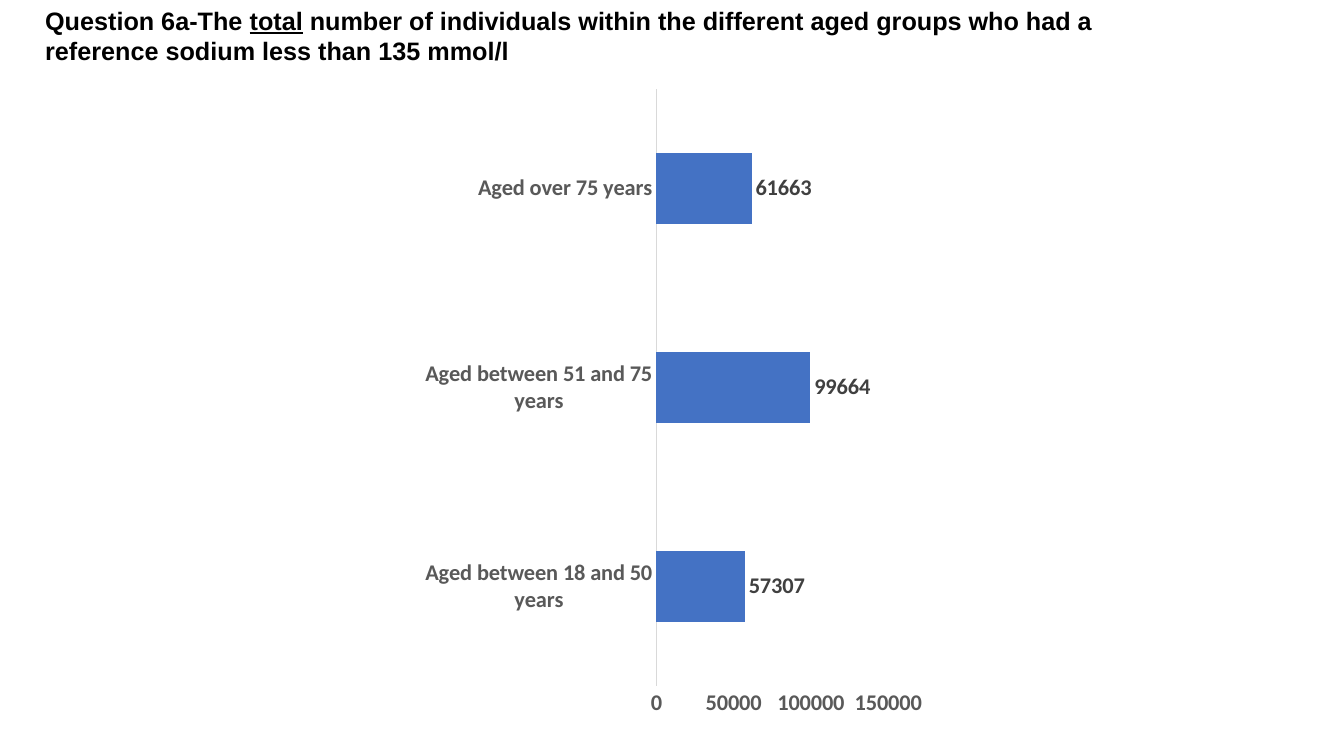
from lxml import etree
from pptx import Presentation
from pptx.chart.data import CategoryChartData
from pptx.dml.color import RGBColor
from pptx.enum.chart import XL_CHART_TYPE as ChartType
from pptx.enum.chart import XL_LABEL_POSITION as LabelPosition
from pptx.enum.chart import XL_TICK_MARK as TickMark
from pptx.enum.text import MSO_AUTO_SIZE as AutoSize
from pptx.oxml.ns import qn
from pptx.util import Inches, Pt

BLACK = RGBColor(0x00, 0x00, 0x00)
BAR_BLUE = RGBColor(0x44, 0x72, 0xC4)
AXIS_TEXT = RGBColor(0x59, 0x59, 0x59)
LABEL_TEXT = RGBColor(0x40, 0x40, 0x40)
AXIS_LINE = RGBColor(0xD9, 0xD9, 0xD9)

TITLE_LINES = [
    [("Question 6a-The ", False), ("total", True),
     (" number of individuals within the different aged groups who had a", False)],
    [("reference sodium less than 135 mmol/l", False)],
]
AGE_GROUPS = {
    "Aged between 18 and 50 years": 57307,
    "Aged between 51 and 75 years": 99664,
    "Aged over 75 years": 61663,
}
PLOT_LAYOUT = {
    "layoutTarget": "inner", "xMode": "edge", "yMode": "edge",
    "x": 0.46, "y": 0, "w": 0.46, "h": 0.93,
}


def set_values(target, values):
    for name, value in values.items():
        setattr(target, name, value)


def set_font(font, color, **values):
    set_values(font, values)
    font.color.rgb = color


def add_title(slide):
    shape = slide.shapes.add_textbox(Inches(0.35), Inches(0), Inches(10.73), Inches(0.71))
    frame = shape.text_frame
    set_values(frame, {"word_wrap": True, "auto_size": AutoSize.SHAPE_TO_FIT_TEXT})
    for index, line in enumerate(TITLE_LINES):
        paragraph = frame.add_paragraph() if index else frame.paragraphs[0]
        for text, underline in line:
            run = paragraph.add_run()
            run.text = text
            set_font(run.font, BLACK, name="Arial", size=Pt(18), bold=True, underline=underline)


def place_plot(chart):
    plot_area = chart.element.find(".//" + qn("c:plotArea"))
    for layout in plot_area.findall(qn("c:layout")):
        plot_area.remove(layout)
    layout = etree.Element(qn("c:layout"))
    manual = etree.SubElement(layout, qn("c:manualLayout"))
    for name, value in PLOT_LAYOUT.items():
        etree.SubElement(manual, qn(f"c:{name}")).set("val", str(value))
    plot_area.insert(0, layout)


def format_axis(axis):
    set_values(axis, {
        "has_major_gridlines": False,
        "major_tick_mark": TickMark.NONE,
        "minor_tick_mark": TickMark.NONE,
    })
    set_font(axis.tick_labels.font, AXIS_TEXT, name="Calibri", size=Pt(16), bold=True)


def add_age_chart(slide):
    data = CategoryChartData()
    data.categories = list(AGE_GROUPS)
    data.add_series("Series 1", list(AGE_GROUPS.values()))
    frame = slide.shapes.add_chart(ChartType.BAR_CLUSTERED, Inches(4.21), Inches(0.88),
                                   Inches(5), Inches(6.37), data)
    chart = frame.chart
    set_values(chart, {"has_legend": False, "has_title": False})
    set_font(chart.font, BLACK, name="Calibri", size=Pt(10))
    place_plot(chart)

    format_axis(chart.category_axis)
    category_line = chart.category_axis.format.line
    category_line.color.rgb = AXIS_LINE
    category_line.width = Pt(0.75)

    format_axis(chart.value_axis)
    set_values(chart.value_axis, {
        "minimum_scale": 0, "maximum_scale": 150000, "major_unit": 50000,
    })
    chart.value_axis.format.line.fill.background()

    plot = chart.plots[0]
    set_values(plot, {"gap_width": 182, "vary_by_categories": False})
    series = plot.series[0]
    series.format.fill.solid()
    series.format.fill.fore_color.rgb = BAR_BLUE
    labels = series.data_labels
    set_values(labels, {"show_value": True, "position": LabelPosition.OUTSIDE_END})
    set_font(labels.font, LABEL_TEXT, name="Calibri", size=Pt(16), bold=True)


def main():
    presentation = Presentation()
    set_values(presentation, {"slide_width": Inches(13.33), "slide_height": Inches(7.5)})
    slide = presentation.slides.add_slide(presentation.slide_layouts[6])
    add_age_chart(slide)
    add_title(slide)
    presentation.save("out.pptx")


if __name__ == "__main__":
    main()
